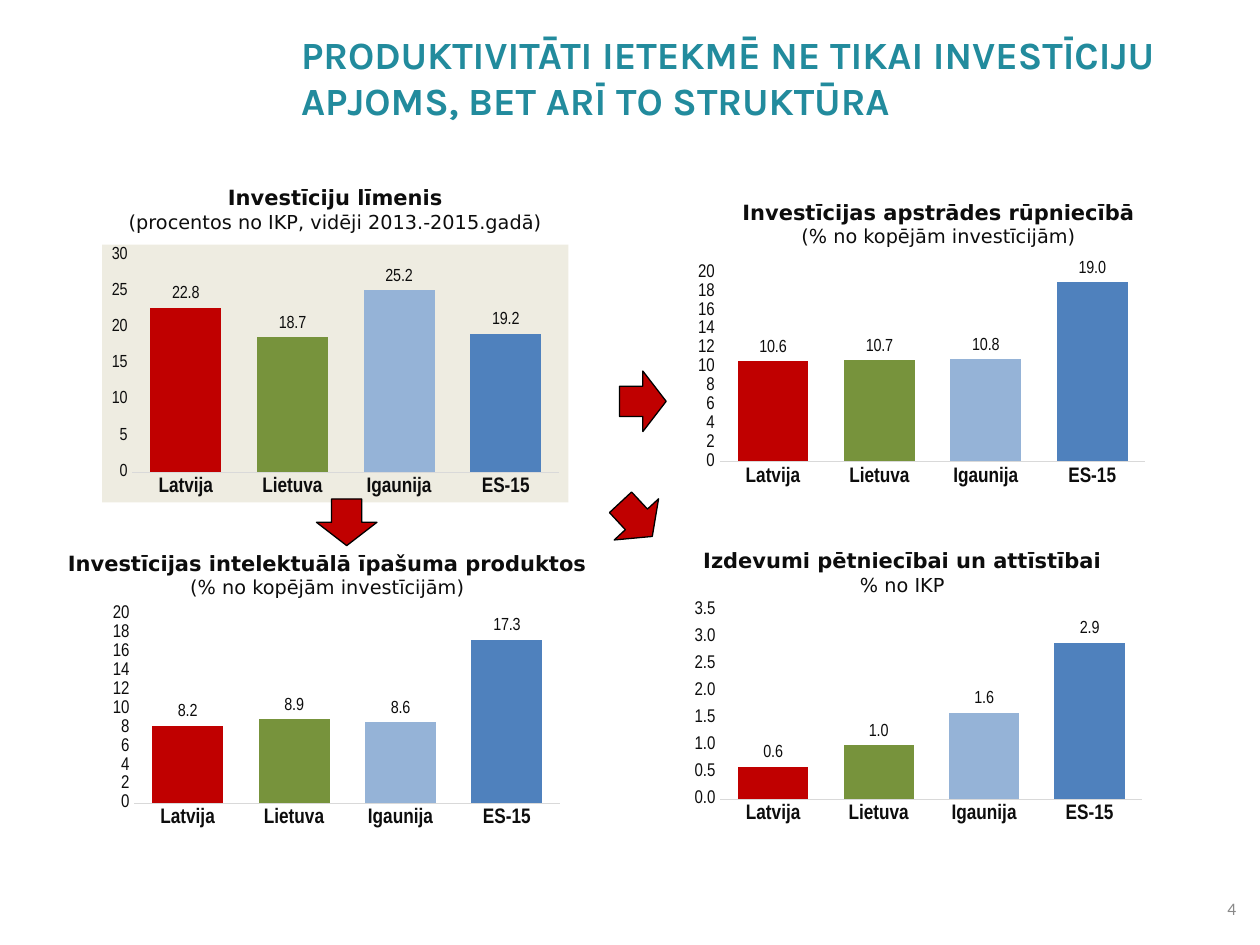
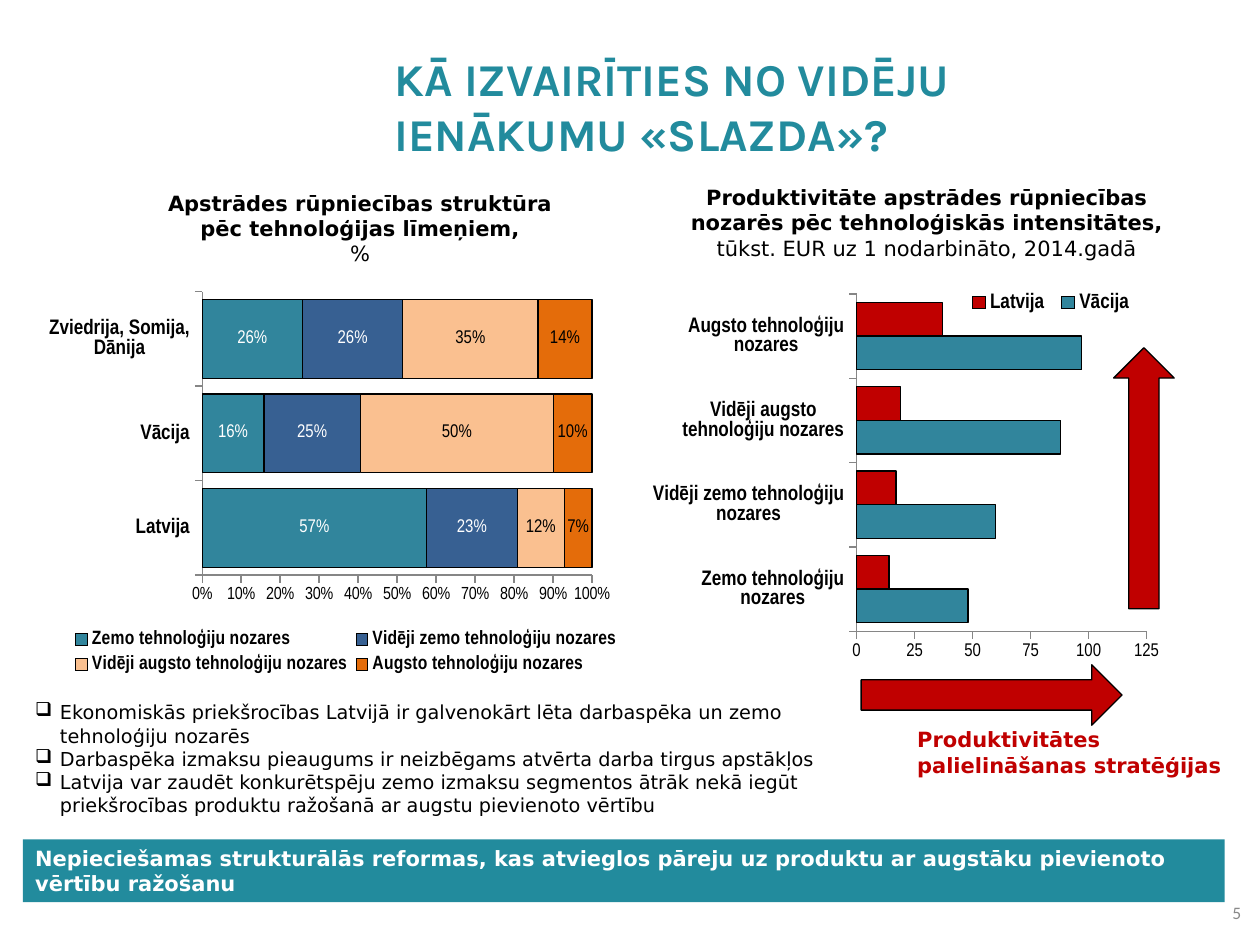
from lxml.etree import SubElement
from pptx import Presentation
from pptx.chart.data import CategoryChartData
from pptx.dml.color import RGBColor
from pptx.enum.chart import XL_CHART_TYPE, XL_LEGEND_POSITION, XL_TICK_MARK
from pptx.enum.shapes import MSO_SHAPE
from pptx.enum.text import MSO_ANCHOR, PP_ALIGN
from pptx.oxml import parse_xml
from pptx.oxml.ns import nsdecls, qn
from pptx.util import Cm, Pt

HUES = {
    "teal": "228B9D", "ink": "0D0D0D", "black": "000000", "white": "FFFFFF",
    "red": "C00000", "green": "77933C", "sky": "95B3D7", "blue": "4F81BD",
    "sand": "EEECE1", "rule": "D9D9D9", "axis": "868686", "page": "898989",
    "sea": "31859C", "navy": "376092", "peach": "FAC090", "orange": "E46C0A",
}
RGB = {name: RGBColor.from_string(code) for name, code in HUES.items()}
BODY, HEAD, FOOT, DATA = "DejaVu Sans", "Karla", "Calibri", "Arial Narrow"


def write(slide, box, lines, font=BODY, size=12, bold=False, hue="black",
          align=PP_ALIGN.LEFT, anchor=MSO_ANCHOR.TOP, fill=None, mark=None):
    """Add a text box; each line is a string or a (string, size, bold) tuple."""
    place = [Cm(n) for n in box]
    if fill:
        shape = slide.shapes.add_shape(MSO_SHAPE.RECTANGLE, *place)
        shape.shadow.inherit = False
        shape.fill.solid()
        shape.fill.fore_color.rgb = RGB[fill]
        shape.line.fill.background()
    else:
        shape = slide.shapes.add_textbox(*place)
    frame = shape.text_frame
    frame.word_wrap = True
    frame.vertical_anchor = anchor
    for i, line in enumerate(lines):
        text, pts, heavy = (line, size, bold) if isinstance(line, str) else line
        para = frame.add_paragraph() if i else frame.paragraphs[0]
        para.alignment = align
        if mark:
            props = para._p.get_or_add_pPr()
            props.set("marL", str(Cm(0.5)))
            props.set("indent", str(-Cm(0.5)))
            SubElement(props, qn("a:buChar")).set("char", mark)
        run = para.add_run()
        run.text = text
        run.font.name, run.font.size, run.font.bold = font, Pt(pts), heavy
        run.font.color.rgb = RGB[hue]


def plot(slide, kind, box, cats, rows, inner, gap, top, step, form="#,##0", size=10.5,
         hue="black", lines=("axis", "axis"), tick=XL_TICK_MARK.OUTSIDE, key=None):
    """Add a chart; rows hold (name, values, hue), key holds (side, size, area)."""
    data = CategoryChartData()
    data.categories = cats
    for name, vals, _ in rows:
        data.add_series(name, vals)
    chart = slide.shapes.add_chart(kind, *[Cm(n) for n in box], data).chart
    chart.has_title = False
    chart.font.name, chart.font.size = DATA, Pt(10)
    chart.font.color.rgb = RGB[hue]
    bars = chart.plots[0]
    bars.gap_width, bars.vary_by_categories = gap, False
    for series, (_, _, tint) in zip(bars.series, rows):
        series.format.fill.solid()
        series.format.fill.fore_color.rgb = RGB[tint]
    axes = chart.category_axis, chart.value_axis
    for axis, line, pts in zip(axes, lines, (12, size)):
        axis.has_major_gridlines = False
        axis.major_tick_mark = tick
        axis.minor_tick_mark = XL_TICK_MARK.NONE
        font = axis.tick_labels.font
        font.name, font.size, font.bold = DATA, Pt(pts), pts == 12
        font.color.rgb = RGB[hue]
        if line:
            axis.format.line.color.rgb = RGB[line]
            axis.format.line.width = Pt(0.75)
        else:
            axis.format.line.fill.background()
    scale = axes[1]
    scale.minimum_scale, scale.maximum_scale, scale.major_unit = 0, top, step
    scale.tick_labels.number_format = form
    scale.tick_labels.number_format_is_linked = False
    areas = [("c:plotArea", 0, inner, '<c:layoutTarget val="inner"/>')]
    chart.has_legend = bool(key)
    if key:
        side, pts, area = key
        chart.legend.position = side
        chart.legend.include_in_layout = False
        font = chart.legend.font
        font.name, font.size, font.bold = DATA, Pt(pts), True
        areas.append(("c:legend", 1, area, ""))
    for tag, spot, area, target in areas:
        owner = chart.element.xpath(f".//{tag}")[0]
        for old in owner.findall(qn("c:layout")):
            owner.remove(old)
        modes = "".join(f'<c:{n}Mode val="edge"/>' for n in "xy")
        sizes = "".join(f'<c:{n} val="{v}"/>' for n, v in zip("xywh", area))
        owner.insert(spot, parse_xml(
            f'<c:layout {nsdecls("c")}><c:manualLayout>{target}{modes}{sizes}'
            '</c:manualLayout></c:layout>'))
    return chart


deck = Presentation()
deck.slide_width, deck.slide_height = Cm(25.4), Cm(19.05)
first, last = [deck.slides.add_slide(deck.slide_layouts[6]) for _ in range(2)]

# Titles and page numbers
for slide, box, text, size in [
    (first, (5.82, 0.5, 18.75, 2.87),
     "PRODUKTIVITĀTI IETEKMĒ NE TIKAI INVESTĪCIJU APJOMS, BET ARĪ TO STRUKTŪRA", 22),
    (last, (7.7, 0.91, 16.03, 1.55), "KĀ IZVAIRĪTIES NO VIDĒJU IENĀKUMU «SLAZDA»?", 26),
]:
    write(slide, box, [text], font=HEAD, size=size, bold=True, hue="teal")
for slide, left, width, text, anchor in [
    (first, 23.42, 1.75, "4", MSO_ANCHOR.TOP), (last, 24.43, 0.84, "5", MSO_ANCHOR.MIDDLE),
]:
    write(slide, (left, 17.98, width, 0.84), [text], font=FOOT, size=10,
          hue="page", align=PP_ALIGN.RIGHT, anchor=anchor)

# Investment: four column charts by country
lands = ["Latvija", "Lietuva", "Igaunija", "ES-15"]
share = "(% no kopējām investīcijām)"
for head, sub, spot, box, vals, inner, top, step, form, size in [
    ("Investīciju līmenis", "(procentos no IKP, vidēji 2013.-2015.gadā)", (0.41, 3.6),
     (2.06, 4.93, 9.4, 5.2), (22.8, 18.7, 25.2, 19.2),
     (0.065, 0.043, 0.915, 0.84), 30, 5, "#,##0", 10),
    ("Investīcijas apstrādes rūpniecībā", share, (12.57, 3.89),
     (13.9, 5.26, 9.4, 4.65), (10.6, 10.7, 10.8, 19),
     (0.065, 0.05, 0.913, 0.82), 20, 2, "#,##0", 10.5),
    ("Investīcijas intelektuālā īpašuma produktos", share, (0.25, 10.97),
     (2.1, 12.15, 9.4, 4.65), (8.2, 8.9, 8.6, 17.3),
     (0.065, 0.05, 0.913, 0.82), 20, 2, "#,##0", 10.5),
    ("Izdevumi pētniecībai un attīstībai", "% no IKP", (11.84, 10.92),
     (13.8, 12.07, 9.4, 4.65), (0.6, 1, 1.6, 2.9),
     (0.077, 0.05, 0.905, 0.82), 3.5, 0.5, "#,##0.0", 10.5),
]:
    write(first, (*spot, 12.7, 1.27), [(head, 12, True), (sub, 11, False)],
          hue="ink", align=PP_ALIGN.CENTER)
    chart = plot(first, XL_CHART_TYPE.COLUMN_CLUSTERED, box, lands,
                 [("Series 1", vals, "blue")], inner, 50, top, step, form, size,
                 hue="ink", lines=("rule", None), tick=XL_TICK_MARK.NONE)
    series = chart.plots[0].series[0]
    for i, tint in enumerate(("red", "green", "sky")):
        fill = series.points[i].format.fill
        fill.solid()
        fill.fore_color.rgb = RGB[tint]
    tags = series.data_labels
    tags.show_value = True
    tags.number_format, tags.number_format_is_linked = "#,##0.0", False
    if top == 30:
        chart.element.find(qn("c:chart")).addnext(parse_xml(
            f'<c:spPr {nsdecls("c", "a")}><a:solidFill><a:srgbClr val="{HUES["sand"]}"/>'
            '</a:solidFill><a:ln><a:noFill/></a:ln></c:spPr>'))

# Technology levels: structure and productivity
write(last, (1.75, 3.71, 11.02, 1.8),
      ["Apstrādes rūpniecības struktūra", "pēc tehnoloģijas līmeņiem,", ("%", 12, False)],
      bold=True, align=PP_ALIGN.CENTER)
write(last, (13.16, 3.6, 11.05, 1.8),
      ["Produktivitāte apstrādes rūpniecības nozarēs pēc tehnoloģiskās intensitātes,",
       ("tūkst. EUR uz 1 nodarbināto, 2014.gadā", 12, False)],
      bold=True, align=PP_ALIGN.CENTER)
levels = [f"{level} tehnoloģiju nozares"
          for level in ("Zemo", "Vidēji zemo", "Vidēji augsto", "Augsto")]
parts = [(0.57, 0.16, 0.26), (0.23, 0.25, 0.26), (0.12, 0.5, 0.35), (0.07, 0.1, 0.14)]
mix = plot(last, XL_CHART_TYPE.BAR_STACKED_100, (0.99, 5.74, 11.79, 8.18),
           ["Latvija", "Vācija", "Zviedrija, Somija, Dānija"],
           list(zip(levels, parts, ("sea", "navy", "peach", "orange"))),
           (0.257, 0.017, 0.671, 0.699), 20, 1, 0.1, "0%", 10,
           key=(XL_LEGEND_POSITION.BOTTOM, 11, (0.025, 0.835, 0.96, 0.14)))
mix.plots[0].overlap = 100
for series, hue in zip(mix.plots[0].series, ("white", "white", "black", "black")):
    tags = series.data_labels
    tags.show_value = True
    tags.number_format, tags.number_format_is_linked = "0%", False
    tags.font.name, tags.font.size = DATA, Pt(10.5)
    tags.font.color.rgb = RGB[hue]
yields = plot(last, XL_CHART_TYPE.BAR_CLUSTERED, (13.16, 5.74, 10.9, 8.43), levels,
              [("Vācija", (48, 60, 88, 97), "sea"), ("Latvija", (14, 17, 19, 37), "red")],
              (0.374, 0.022, 0.539, 0.807), 50, 125, 25,
              key=(XL_LEGEND_POSITION.RIGHT, 12, (0.57, 0.005, 0.33, 0.075)))
for chart in (mix, yields):
    for series in chart.plots[0].series:
        series.format.line.color.rgb = RGB["black"]
        series.format.line.width = Pt(0.75)

write(last, (0.46, 14, 16.41, 2.67), [
    "Ekonomiskās priekšrocības Latvijā ir galvenokārt lēta darbaspēka un zemo "
    "tehnoloģiju nozarēs",
    "Darbaspēka izmaksu pieaugums ir neizbēgams atvērta darba tirgus apstākļos",
    "Latvija var zaudēt konkurētspēju zemo izmaksu segmentos ātrāk nekā iegūt "
    "priekšrocības produktu ražošanā ar augstu pievienoto vērtību",
], size=11, mark="❑")
write(last, (0.46, 16.92, 24.23, 1.27),
      ["Nepieciešamas strukturālās reformas, kas atvieglos pāreju uz produktu ar "
       "augstāku pievienoto vērtību ražošanu"],
      bold=True, hue="white", anchor=MSO_ANCHOR.MIDDLE, fill="teal")
write(last, (18.24, 14.53, 6.86, 1.27), ["Produktivitātes palielināšanas stratēģijas"],
      bold=True, hue="red")

# Arrows on both slides
for slide, left, top, tall, turn in [
    (first, 6.38, 10.06, 0.94, 0), (first, 12.35, 7.62, 0.94, 270),
    (first, 12.22, 10, 0.94, 317.1),
    (last, 19.38, 11.38, 5.26, 270), (last, 22.45, 7.01, 5.26, 180),
]:
    arrow = slide.shapes.add_shape(
        MSO_SHAPE.DOWN_ARROW, Cm(left), Cm(top), Cm(1.22), Cm(tall))
    arrow.rotation = turn
    arrow.shadow.inherit = False
    arrow.fill.solid()
    arrow.fill.fore_color.rgb = RGB["red"]
    arrow.line.color.rgb = RGB["black"]
    arrow.line.width = Pt(0.75)

deck.save("out.pptx")
